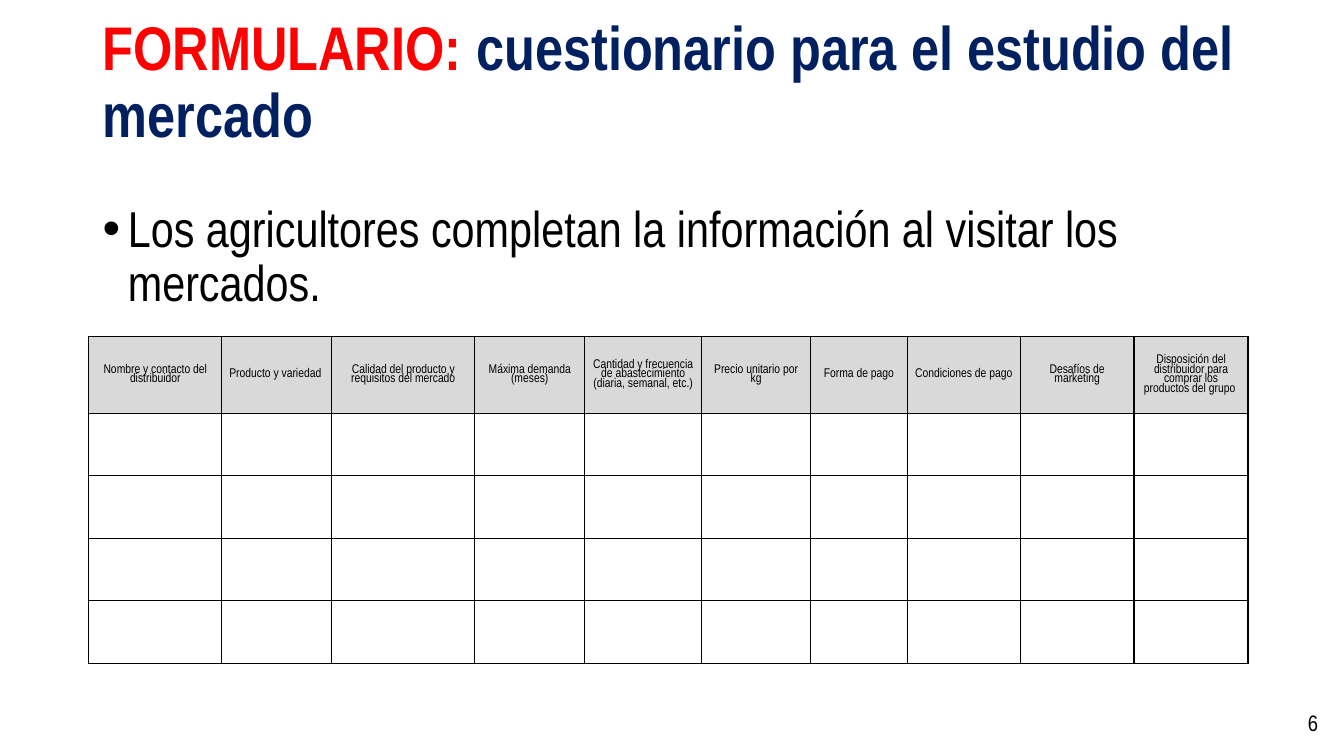
import pptx
import pptx.dml.color
import pptx.enum.text
import pptx.oxml
import pptx.oxml.ns
import pptx.util
import lxml.etree

ALIGN = pptx.enum.text.PP_ALIGN
ANCHOR = pptx.enum.text.MSO_ANCHOR
BLACK, RED, NAVY, GREY, WHITE = "000000", "FF0000", "002060", "D9D9D9", "FFFFFF"
HEADINGS = [
    "Nombre y contacto del distribuidor",
    "Producto y variedad ",
    "Calidad del producto y requisitos del mercado",
    "Máxima demanda (meses)",
    "Cantidad y frecuencia de abastecimiento (diaria, semanal, etc.)",
    "Precio unitario por kg",
    "Forma de pago",
    "Condiciones de pago",
    "Desafíos de marketing",
    "Disposición del distribuidor para comprar los productos del grupo ",
]
COLUMN_WIDTHS = [132, 109, 142, 109, 116, 108, 96, 112, 113, 113]
ROW_HEIGHTS = [76] + [62] * 4


def px(length):
    """Turn px, at 100 to the inch, into EMU."""
    return pptx.util.Emu(length * 9144)


def colour(value):
    """Turn a hex string into a colour."""
    return pptx.dml.color.RGBColor.from_string(value)


def write(paragraph, text, size=18, ink=BLACK, bold=False, align=ALIGN.LEFT, spacing=1.0):
    """Add formatted text to a paragraph."""
    paragraph.alignment = align
    paragraph.line_spacing = spacing
    run = paragraph.add_run()
    run.text = text
    run.font.name = "Arial Narrow"
    run.font.size = pptx.util.Pt(size)
    run.font.bold = bold
    run.font.color.rgb = colour(ink)


class FormSlide:
    """Hold the slide and draw its elements."""

    def __init__(self, presentation):
        """Add a blank slide."""
        self.slide = presentation.slides.add_slide(presentation.slide_layouts[6])

    def text_box(self, left, top, width, height, anchor=ANCHOR.MIDDLE):
        """Add a wrapping text box and return its first paragraph."""
        frame = self.slide.shapes.add_textbox(px(left), px(top), px(width), px(height)).text_frame
        frame.word_wrap = True
        frame.vertical_anchor = anchor
        return frame.paragraphs[0]

    def bullet(self, paragraph, indent):
        """Give a paragraph a hanging round bullet."""
        properties = paragraph._p.get_or_add_pPr()
        properties.set("marL", str(px(indent)))
        properties.set("indent", str(-px(indent)))
        font = lxml.etree.SubElement(properties, pptx.oxml.ns.qn("a:buFont"))
        font.set("typeface", "Arial")
        mark = lxml.etree.SubElement(properties, pptx.oxml.ns.qn("a:buChar"))
        mark.set("char", "•")

    def cell(self, cell, fill):
        """Fill a cell and outline all four sides."""
        cell.margin_left = cell.margin_right = px(7)
        cell.margin_top = cell.margin_bottom = 0
        cell.vertical_anchor = ANCHOR.MIDDLE
        properties = cell._tc.get_or_add_tcPr()
        for side in ("lnL", "lnR", "lnT", "lnB"):
            properties.append(pptx.oxml.parse_xml(
                f'<a:{side} {pptx.oxml.ns.nsdecls("a")} w="12700"><a:solidFill>'
                f'<a:srgbClr val="{BLACK}"/></a:solidFill></a:{side}>'))
        cell.fill.solid()
        cell.fill.fore_color.rgb = colour(fill)

    def form_table(self, left, top, headings, widths, heights):
        """Add a table with a heading row and empty rows to fill in."""
        table = self.slide.shapes.add_table(
            len(heights), len(widths), px(left), px(top), px(sum(widths)), px(sum(heights))).table
        for column, width in zip(table.columns, widths):
            column.width = px(width)
        for row, height in zip(table.rows, heights):
            row.height = px(height)
            for cell in row.cells:
                self.cell(cell, WHITE)
        for cell, heading in zip(table.rows[0].cells, headings):
            cell.fill.fore_color.rgb = colour(GREY)
            write(cell.text_frame.paragraphs[0], heading, size=9, align=ALIGN.CENTER, spacing=0.8)


def main():
    """Build and save the slide."""
    presentation = pptx.Presentation()
    presentation.slide_width, presentation.slide_height = px(1333), px(750)
    form = FormSlide(presentation)

    title = form.text_box(92, 11, 1150, 145)
    write(title, "FORMULARIO: ", size=44, ink=RED, bold=True, spacing=0.9)
    write(title, "cuestionario para el estudio del mercado", size=44, ink=NAVY, bold=True, spacing=0.9)

    write(form.text_box(1017, 697, 300, 40), "6", size=16, align=ALIGN.RIGHT)

    instruction = form.text_box(92, 197, 1113, 153, anchor=ANCHOR.TOP)
    instruction.space_before = pptx.util.Pt(10)
    write(instruction, "Los agricultores completan la información al visitar los mercados.",
          size=36, spacing=0.9)
    form.bullet(instruction, 25)

    form.form_table(88, 334, HEADINGS, COLUMN_WIDTHS, ROW_HEIGHTS)
    presentation.save("out.pptx")


if __name__ == "__main__":
    main()
